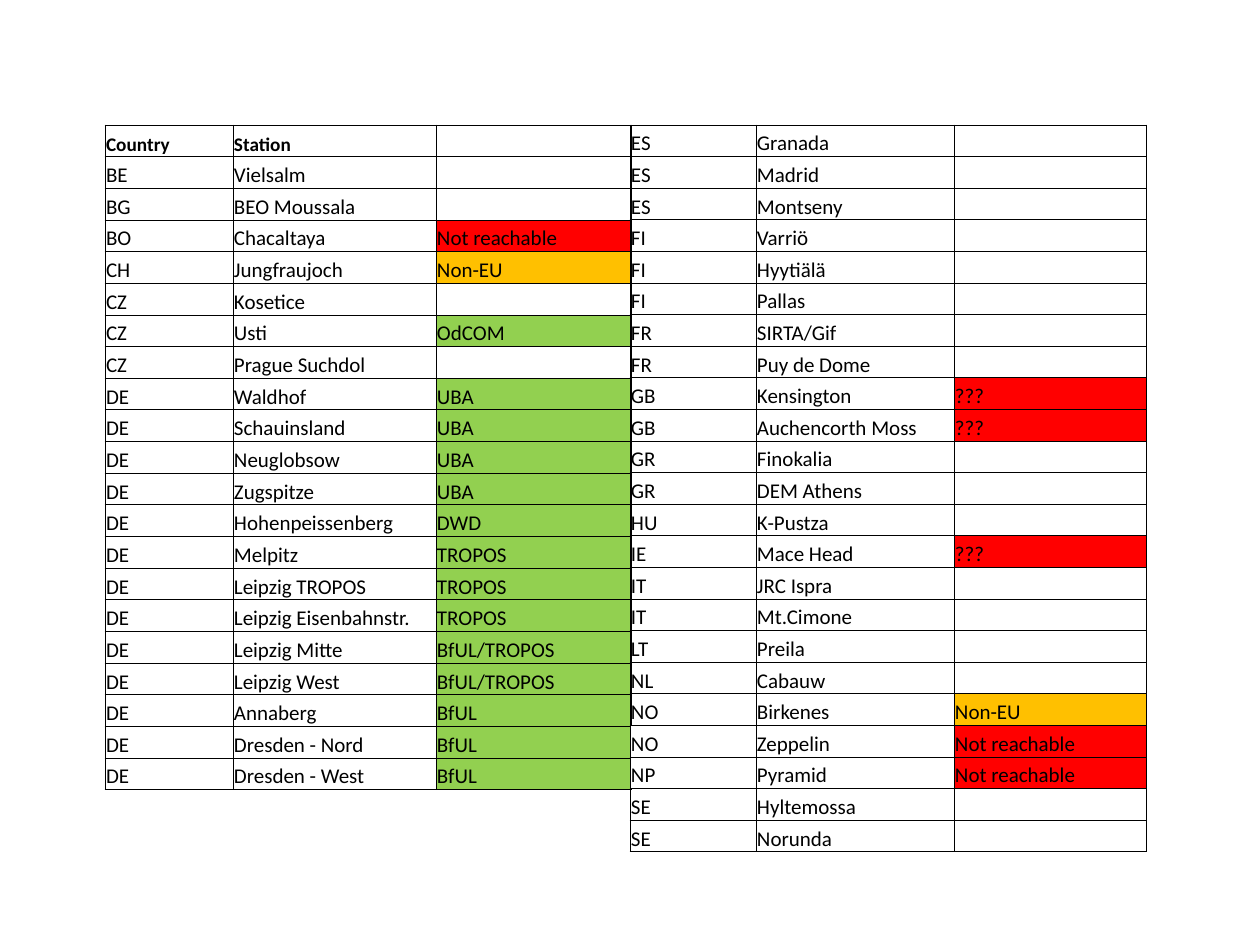
from dataclasses import dataclass

from lxml import etree
from pptx import Presentation
from pptx.dml.color import RGBColor
from pptx.enum.text import MSO_ANCHOR
from pptx.oxml.ns import qn
from pptx.util import Emu, Pt

BOTTOM = MSO_ANCHOR.BOTTOM
SCALE = 914400 / 126
FONT = "Calibri"
BLACK, WHITE = "000000", "FFFFFF"
RED, AMBER, GREEN = "FF0000", "FFC000", "92D050"
STATUS_FILLS = {"Not reachable": RED, "???": RED, "Non-EU": AMBER}
BORDERS = ("a:lnL", "a:lnR", "a:lnT", "a:lnB")
CELL_FORMAT = {
    "margin_left": 1,
    "margin_right": 1,
    "margin_top": 1,
    "margin_bottom": 0,
}
TABLE_FLAGS = {"first_row": False, "horz_banding": False}


@dataclass(frozen=True)
class Station:
    country: str
    name: str
    status: str = ""
    header: bool = False


@dataclass(frozen=True)
class StationTable:
    left: int
    top: int
    height: int
    columns: tuple[int, ...]
    stations: tuple[Station, ...]


LEFT_STATIONS = (
    Station("Country", "Station", header=True),
    Station("BE", "Vielsalm"),
    Station("BG", "BEO Moussala"),
    Station("BO", "Chacaltaya", "Not reachable"),
    Station("CH", "Jungfraujoch", "Non-EU"),
    Station("CZ", "Kosetice"),
    Station("CZ", "Usti", "OdCOM"),
    Station("CZ", "Prague Suchdol"),
    Station("DE", "Waldhof", "UBA"),
    Station("DE", "Schauinsland", "UBA"),
    Station("DE", "Neuglobsow", "UBA"),
    Station("DE", "Zugspitze", "UBA"),
    Station("DE", "Hohenpeissenberg", "DWD"),
    Station("DE", "Melpitz", "TROPOS"),
    Station("DE", "Leipzig TROPOS", "TROPOS"),
    Station("DE", "Leipzig Eisenbahnstr.", "TROPOS"),
    Station("DE", "Leipzig Mitte", "BfUL/TROPOS"),
    Station("DE", "Leipzig West", "BfUL/TROPOS"),
    Station("DE", "Annaberg", "BfUL"),
    Station("DE", "Dresden - Nord", "BfUL"),
    Station("DE", "Dresden - West", "BfUL"),
)
RIGHT_STATIONS = (
    Station("ES", "Granada"),
    Station("ES", "Madrid"),
    Station("ES", "Montseny"),
    Station("FI", "Varriö"),
    Station("FI", "Hyytiälä"),
    Station("FI", "Pallas"),
    Station("FR", "SIRTA/Gif"),
    Station("FR", "Puy de Dome"),
    Station("GB", "Kensington", "???"),
    Station("GB", "Auchencorth Moss", "???"),
    Station("GR", "Finokalia"),
    Station("GR", "DEM Athens"),
    Station("HU", "K-Pustza"),
    Station("IE", "Mace Head", "???"),
    Station("IT", "JRC Ispra"),
    Station("IT", "Mt.Cimone"),
    Station("LT", "Preila"),
    Station("NL", "Cabauw"),
    Station("NO", "Birkenes", "Non-EU"),
    Station("NO", "Zeppelin", "Not reachable"),
    Station("NP", "Pyramid", "Not reachable"),
    Station("SE", "Hyltemossa"),
    Station("SE", "Norunda"),
)
TABLES = (
    StationTable(105, 125, 665, (128, 203, 195), LEFT_STATIONS),
    StationTable(630, 125, 727, (126, 198, 192), RIGHT_STATIONS),
)


def px(value: float) -> Emu:
    return Emu(round(value * SCALE))


def color(value: str) -> RGBColor:
    return RGBColor.from_string(value)


def add_borders(cell) -> None:
    tc_pr = cell._tc.get_or_add_tcPr()
    for tag in BORDERS:
        line = etree.SubElement(tc_pr, qn(tag), w=str(Pt(0.5)))
        fill = etree.SubElement(line, qn("a:solidFill"))
        etree.SubElement(fill, qn("a:srgbClr"), val=BLACK)


def write_cell(cell, text: str, fill: str, header: bool) -> None:
    for name, value in CELL_FORMAT.items():
        setattr(cell, name, px(value))
    cell.vertical_anchor = BOTTOM
    add_borders(cell)
    if fill:
        cell.fill.solid()
        cell.fill.fore_color.rgb = color(fill)
    else:
        cell.fill.background()
    p = cell.text_frame.paragraphs[0]
    if not text:
        etree.SubElement(p._p, qn("a:endParaRPr"), sz="1200")
        return
    r = p.add_run()
    r.text = text
    style = {"name": FONT, "size": Pt(11 if header else 12), "bold": header}
    for name, value in style.items():
        setattr(r.font, name, value)
    r.font.color.rgb = color(BLACK)


def cell_fills(station: Station) -> tuple[str, str, str]:
    base = WHITE if station.status == "Not reachable" else ""
    status = STATUS_FILLS.get(station.status, GREEN) if station.status else ""
    return base, base, status


def draw_table(s, spec: StationTable) -> None:
    count = len(spec.stations)
    table = s.shapes.add_table(
        count, len(spec.columns), px(spec.left), px(spec.top),
        px(sum(spec.columns)), px(spec.height),
    ).table
    for name, value in TABLE_FLAGS.items():
        setattr(table, name, value)
    for column, width in zip(table.columns, spec.columns):
        column.width = px(width)
    for row, station in zip(table.rows, spec.stations):
        row.height = px(spec.height / count)
        texts = (station.country, station.name, station.status)
        for cell, text, fill in zip(row.cells, texts, cell_fills(station)):
            write_cell(cell, text, fill, station.header)


def main() -> None:
    """Build the slide listing stations and their contact status."""
    prs = Presentation()
    prs.slide_width, prs.slide_height = px(1260), px(945)
    s = prs.slides.add_slide(prs.slide_layouts[6])
    for spec in TABLES:
        draw_table(s, spec)
    prs.save("out.pptx")


if __name__ == "__main__":
    main()
